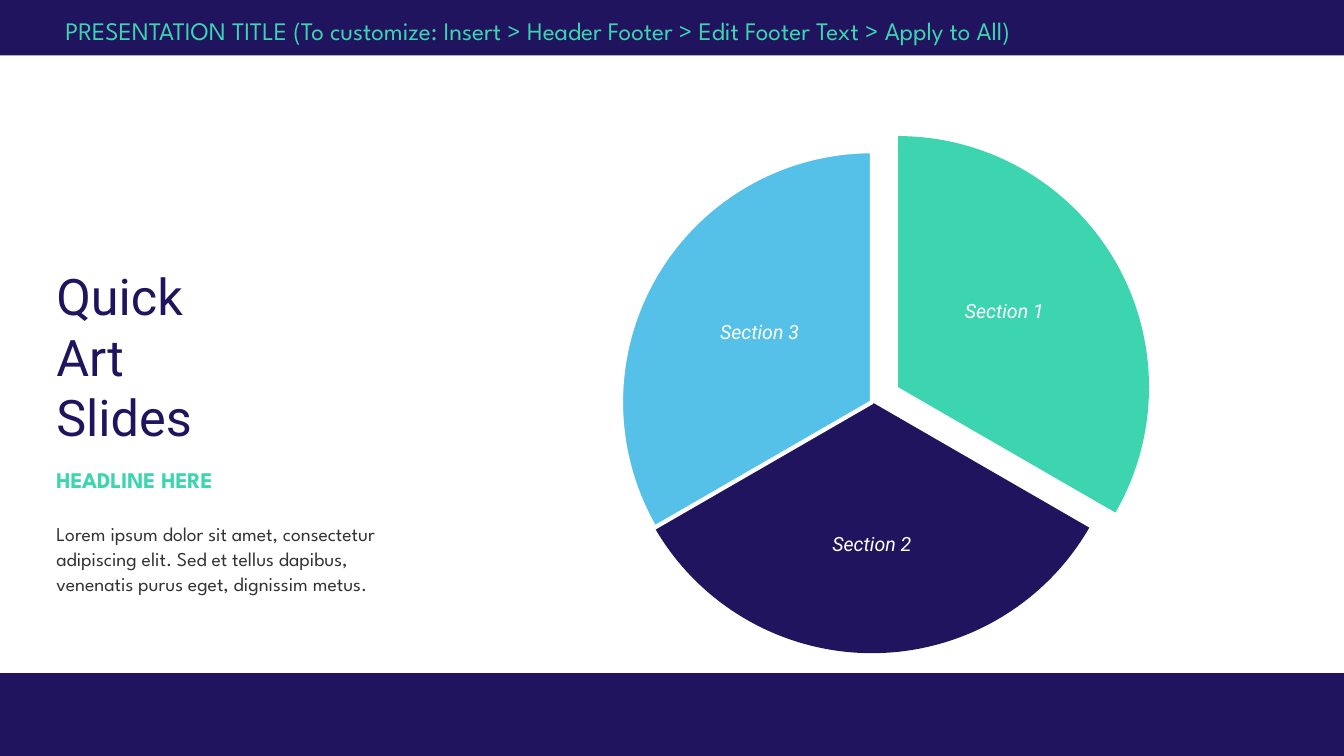
import math
from dataclasses import dataclass

import pptx
import pptx.dml.color
import pptx.enum.shapes
import pptx.enum.text
import pptx.util
from pptx.util import Cm

Shapes = pptx.enum.shapes.MSO_SHAPE
Align = pptx.enum.text.PP_ALIGN
Anchor = pptx.enum.text.MSO_ANCHOR
AutoSize = pptx.enum.text.MSO_AUTO_SIZE


@dataclass(frozen=True)
class Theme:
    bar: str = "21145F"
    navy: str = "20145E"
    green: str = "3CD5AF"
    blue: str = "55C1E9"
    white: str = "FFFFFF"
    body: str = "333333"
    heading_font: str = "Roboto"
    text_font: str = "League Spartan"
    title_size: int = 36
    header_size: int = 18
    headline_size: int = 16
    text_size: int = 14


THEME = Theme()
SLIDE_WIDTH, SLIDE_HEIGHT = 33.87, 19.05

# Name, start angle, fill, outline, explosion, label offset from the tip, label size
SECTIONS = [
    ("Section 1", 270, THEME.green, None, 0.76, (2.68, -1.88), (4.29, 4.22)),
    ("Section 2", 30, THEME.navy, None, 0, (0, 3.61), (5.72, 3.91)),
    ("Section 3", 150, THEME.blue, THEME.white, 0, (-2.83, -1.73), (4.29, 4.22)),
]


def rgb(value):
    return pptx.dml.color.RGBColor.from_string(value)


def set_all(target, values):
    for name, value in values.items():
        setattr(target, name, value)


def write_text(shape, text, color, font, frame=None, paragraph=None):
    """Fill a shape with one paragraph, formatted from dicts of values."""
    text_frame = shape.text_frame
    text_frame.text = text
    set_all(text_frame, {"word_wrap": True, **(frame or {})})
    first = text_frame.paragraphs[0]
    set_all(first, {"alignment": Align.LEFT, **(paragraph or {})})
    run_fonts = [run.font for run in first.runs]
    for run_font in run_fonts:
        set_all(run_font, {**font, "size": pptx.util.Pt(font["size"])})
        run_font.color.rgb = rgb(color)


def margins(horizontal, vertical):
    return {
        "margin_left": Cm(horizontal), "margin_right": Cm(horizontal),
        "margin_top": Cm(vertical), "margin_bottom": Cm(vertical),
    }


def add_text(slide, box, *args, **kwargs):
    shape = slide.shapes.add_textbox(*map(Cm, box))
    write_text(shape, *args, **kwargs)


def add_filled(slide, kind, box, fill, outline=None):
    shape = slide.shapes.add_shape(kind, *map(Cm, box))
    shape.shadow.inherit = False
    shape.fill.solid()
    shape.fill.fore_color.rgb = rgb(fill)
    if outline:
        shape.line.color.rgb = rgb(outline)
        shape.line.width = pptx.util.Pt(3)
    else:
        shape.line.fill.background()
    return shape


def add_header(slide, box):
    left, top, width, height = box
    add_filled(slide, Shapes.RECTANGLE, box, THEME.bar)
    add_text(
        slide, (left + 1.4, top + 0.25, 29.36, 1.02),
        "PRESENTATION TITLE (To customize: Insert > Header Footer > "
        "Edit Footer Text > Apply to All)",
        THEME.green, {"name": THEME.text_font, "size": THEME.header_size},
    )


def add_footer(slide, box):
    add_filled(slide, Shapes.RECTANGLE, box, THEME.bar)


def add_pie(slide, box):
    """Draw equal sections, exploding each along its bisector."""
    left, top, diameter, _ = box
    sweep = 360 / len(SECTIONS)
    for name, start, fill, outline, explosion, offset, size in SECTIONS:
        bisector = math.radians(start + sweep / 2)
        x = left + explosion * math.cos(bisector)
        y = top + explosion * math.sin(bisector)
        section = add_filled(slide, Shapes.PIE, (x, y, diameter, diameter), fill, outline)
        for index, angle in enumerate((start, (start + sweep) % 360)):
            section.adjustments[index] = angle * 0.6

        label_left = x + diameter / 2 + offset[0] - size[0] / 2
        label_top = y + diameter / 2 + offset[1] - size[1] / 2
        add_text(
            slide, (label_left, label_top, *size), name, THEME.white,
            {"name": THEME.heading_font, "size": THEME.text_size, "italic": True},
            {"vertical_anchor": Anchor.MIDDLE, **margins(0.05, 0.05)},
            {"alignment": Align.CENTER, "line_spacing": 0.9},
        )


def add_copy(slide, box):
    """Stack title, headline and body text down the left column."""
    left, top, width, height = box
    title = slide.shapes.title
    set_all(title, {"left": Cm(left), "top": Cm(top), "width": Cm(width), "height": Cm(4.95)})
    write_text(
        title, "Quick\vArt\vSlides", THEME.navy,
        {"name": THEME.heading_font, "size": THEME.title_size},
        {"vertical_anchor": Anchor.MIDDLE, "auto_size": AutoSize.NONE, **margins(0, 0)},
    )
    growing = {"auto_size": AutoSize.SHAPE_TO_FIT_TEXT, **margins(0, 0.13)}
    add_text(
        slide, (left, top + 5.11, 4.17, 0.94), "HEADLINE HERE", THEME.green,
        {"name": THEME.text_font, "size": THEME.headline_size, "bold": True},
        {**growing, "word_wrap": False},
    )
    add_text(
        slide, (left, top + 6.48, 8.84, height - 6.48),
        "Lorem ipsum dolor sit amet, consectetur adipiscing elit. "
        "Sed et tellus dapibus, venenatis purus eget, dignissim metus.",
        THEME.body, {"name": THEME.text_font, "size": THEME.text_size},
        growing, {"line_spacing": pptx.util.Pt(18)},
    )


def main():
    presentation = pptx.Presentation()
    presentation.slide_width = Cm(SLIDE_WIDTH)
    presentation.slide_height = Cm(SLIDE_HEIGHT)
    slide = presentation.slides.add_slide(presentation.slide_layouts[5])
    add_header(slide, (0, 0, SLIDE_WIDTH, 1.4))
    add_footer(slide, (0, 16.96, SLIDE_WIDTH, SLIDE_HEIGHT - 16.96))
    add_pie(slide, (15.65, 3.81, 12.65, 12.65))
    add_copy(slide, (1.42, 6.5, 11.63, 9.25))
    presentation.save("out.pptx")


if __name__ == "__main__":
    main()
